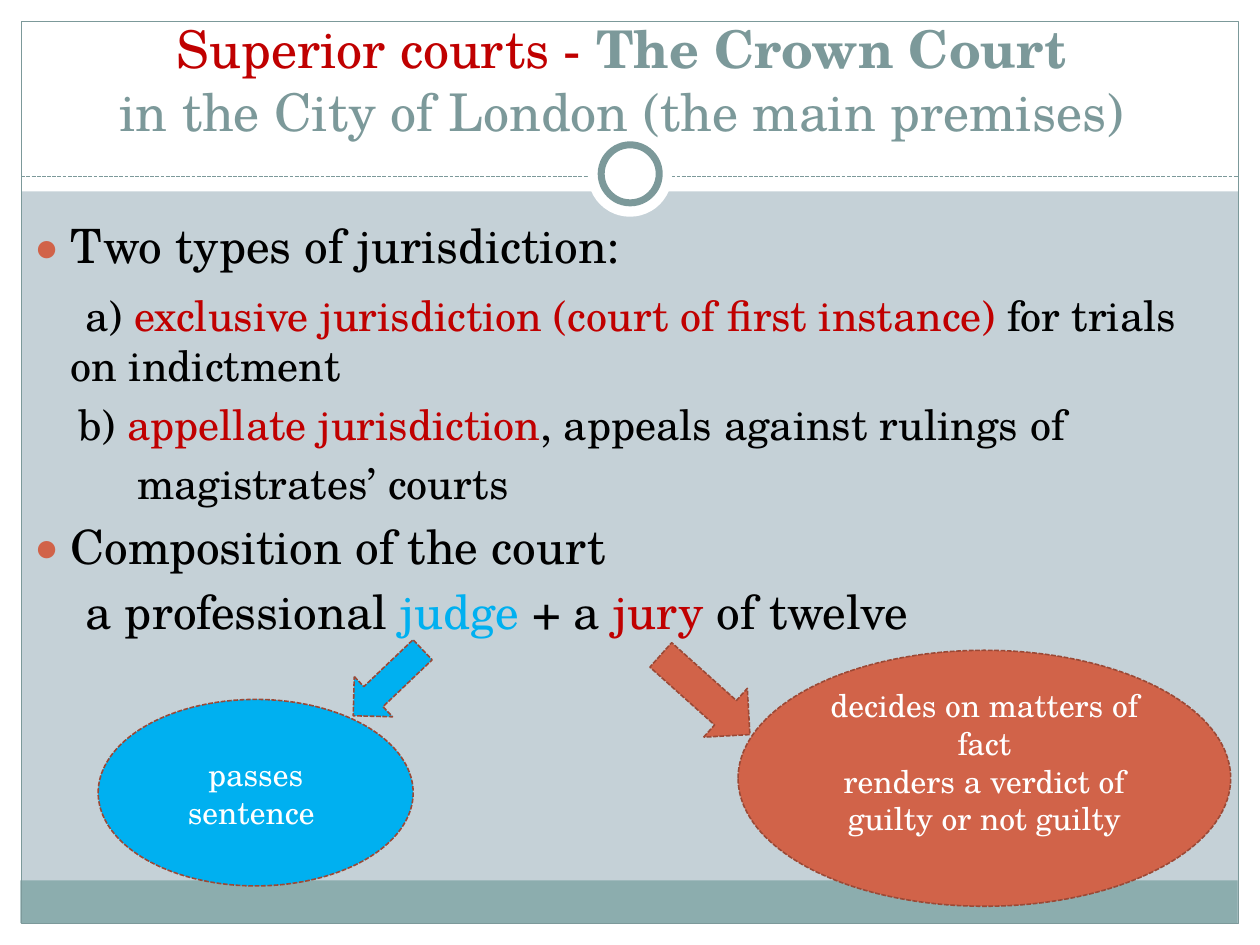
from lxml.etree import SubElement
from pptx import Presentation
from pptx.dml.color import RGBColor
from pptx.enum.dml import MSO_LINE
from pptx.enum.shapes import MSO_CONNECTOR, MSO_SHAPE
from pptx.enum.text import MSO_ANCHOR, MSO_AUTO_SIZE, PP_ALIGN
from pptx.oxml.ns import qn
from pptx.util import Cm, Pt

FONT = "TeX Gyre Schola"
WHITE, BLACK, RED, BLUE = "FFFFFF", "000000", "C00000", "00B0F0"
TEAL, BAND, RUST, EDGE, BACK = "7C999A", "8CADAE", "D16349", "9B4936", "C5D1D7"


def tint(code):
    return RGBColor.from_string(code)


class Page:
    """Holds the style and the current slide, and draws each kind of element."""

    def __init__(self, deck):
        self.slide = deck.slides.add_slide(deck.slide_layouts[1])
        self.shapes = self.slide.shapes
        fill = self.slide.background.fill
        fill.solid()
        fill.fore_color.rgb = tint(BACK)

    def stroke(self, line, color, width, dash):
        line.color.rgb = tint(color)
        line.width = Pt(width)
        if dash:
            line.dash_style = MSO_LINE.SQUARE_DOT

    def shape(self, kind, box, fill=None, line=None, width=0.75, dash=False, turn=0):
        item = self.shapes.add_shape(kind, *map(Cm, box))
        item.shadow.inherit = False
        item.rotation = turn
        if fill:
            item.fill.solid()
            item.fill.fore_color.rgb = tint(fill)
        else:
            item.fill.background()
        if line:
            self.stroke(item.line, line, width, dash)
        else:
            item.line.fill.background()
        return item

    def rule(self, left, right, top):
        line = self.shapes.add_connector(
            MSO_CONNECTOR.STRAIGHT, Cm(left), Cm(top), Cm(right), Cm(top))
        self.stroke(line.line, TEAL, 0.75, True)
        SubElement(line._element.spPr, qn("a:effectLst"))

    def holder(self, item, box, anchor):
        item.left, item.top, item.width, item.height = map(Cm, box)
        item.element.getparent().append(item.element)
        frame = item.text_frame
        frame.word_wrap = True
        frame.auto_size = MSO_AUTO_SIZE.NONE
        frame.vertical_anchor = anchor
        return frame

    def run(self, para, text, size, color, bold=False):
        font = self.add(para, text).font
        font.name, font.size, font.bold = FONT, Pt(size), bold
        font.color.rgb = tint(color)

    def add(self, para, text):
        run = para.add_run()
        run.text = text
        return run

    def para(self, frame, first):
        return frame.paragraphs[0] if first else frame.add_paragraph()

    def title(self, box, rows):
        para = self.holder(self.shapes.title, box, MSO_ANCHOR.BOTTOM).paragraphs[0]
        para.alignment = PP_ALIGN.CENTER
        for num, row in enumerate(rows):
            if num:
                para.add_line_break()
            for text, color, bold in row:
                self.run(para, text, 29.7, color, bold)

    def bullet(self, para, shown, indent):
        props = para._p.get_or_add_pPr()
        props.set("marL", str(Cm(0.76)))
        props.set("indent", str(Cm(indent)))
        if not shown:
            SubElement(props, qn("a:buNone"))
            return
        SubElement(SubElement(props, qn("a:buClr")), qn("a:srgbClr"), val=RUST)
        SubElement(props, qn("a:buSzPct"), val="85000")
        SubElement(props, qn("a:buFont"), typeface=FONT)
        SubElement(props, qn("a:buChar"), char="●")

    def list(self, box, rows):
        frame = self.holder(self.slide.placeholders[1], box, MSO_ANCHOR.TOP)
        for num, (mark, indent, space, size, runs) in enumerate(rows):
            para = self.para(frame, num == 0)
            para.space_before = Pt(space)
            self.bullet(para, mark, indent)
            for text, color in runs:
                self.run(para, text, size, color)

    def arrow(self, box, fill, turn):
        self.shape(MSO_SHAPE.DOWN_ARROW, box, fill, EDGE, 0.9, True, turn)

    def oval(self, box, fill, rows, foot=0.13):
        frame = self.shape(MSO_SHAPE.OVAL, box, fill, EDGE, 0.9, True).text_frame
        frame.word_wrap = True
        frame.vertical_anchor = MSO_ANCHOR.MIDDLE
        frame.margin_bottom = Cm(foot)
        for num, text in enumerate(rows):
            para = self.para(frame, num == 0)
            para.alignment = PP_ALIGN.CENTER
            self.run(para, text, 18, WHITE)


def main():
    deck = Presentation()
    deck.slide_width, deck.slide_height = Cm(25.4), Cm(19.05)
    page = Page(deck)

    for box in [(0, 18.62, 25.4, 0.43), (0, 0, 25.4, 3.86),
                (0, 0, 0.43, 19.05), (24.97, 0, 0.43, 19.05)]:
        page.shape(MSO_SHAPE.RECTANGLE, box, WHITE)
    page.shape(MSO_SHAPE.RECTANGLE, (0.41, 17.75, 24.54, 0.86), BAND)
    page.shape(MSO_SHAPE.RECTANGLE, (0.43, 0.43, 24.54, 18.19), None, TEAL)
    page.rule(0.43, 24.97, 3.56)
    page.shape(MSO_SHAPE.OVAL, (11.85, 2.67, 1.7, 1.7), WHITE)
    page.shape(MSO_SHAPE.OVAL, (12.12, 2.92, 1.17, 1.17), WHITE, TEAL, 4)

    page.title((0.84, 0.64, 23.7, 2.34), [
        [("Superior courts - ", RED, False), ("The Crown Court ", TEAL, True)],
        [("in the City of London (the main premises) ", TEAL, False)],
    ])
    page.list((0.41, 4.24, 24.61, 12.7), [
        (True, -0.76, 5, 27, [("Two types of jurisdiction:", BLACK)]),
        (False, 0.3, 9, 24, [
            ("a) ", BLACK),
            ("exclusive jurisdiction (court of first instance) ", RED),
            ("for trials on indictment", BLACK)]),
        (False, 0.15, 5, 24, [
            ("b) ", BLACK), ("appellate jurisdiction", RED),
            (", appeals against rulings of", BLACK)]),
        (False, 1.34, 5, 24, [("magistrates’ courts", BLACK)]),
        (True, -0.76, 5, 27, [("Composition of the court", BLACK)]),
        (False, 0.3, 5, 27, [
            ("a professional ", BLACK), ("judge", BLUE), (" + a ", BLACK),
            ("jury", RED), (" of twelve", BLACK)]),
    ])

    page.arrow((13.56, 12.8, 1.32, 2.41), RUST, 311.8)
    page.arrow((7.26, 12.8, 1.12, 1.93), BLUE, 46.4)
    page.oval((1.98, 14.1, 6.35, 3.76), BLUE, ["passes sentence "])
    page.oval((14.88, 13.11, 9.93, 5.16), RUST, [
        "decides on matters of fact",
        "renders a verdict of guilty or not guilty"], 0.8)
    deck.save("out.pptx")


if __name__ == "__main__":
    main()
